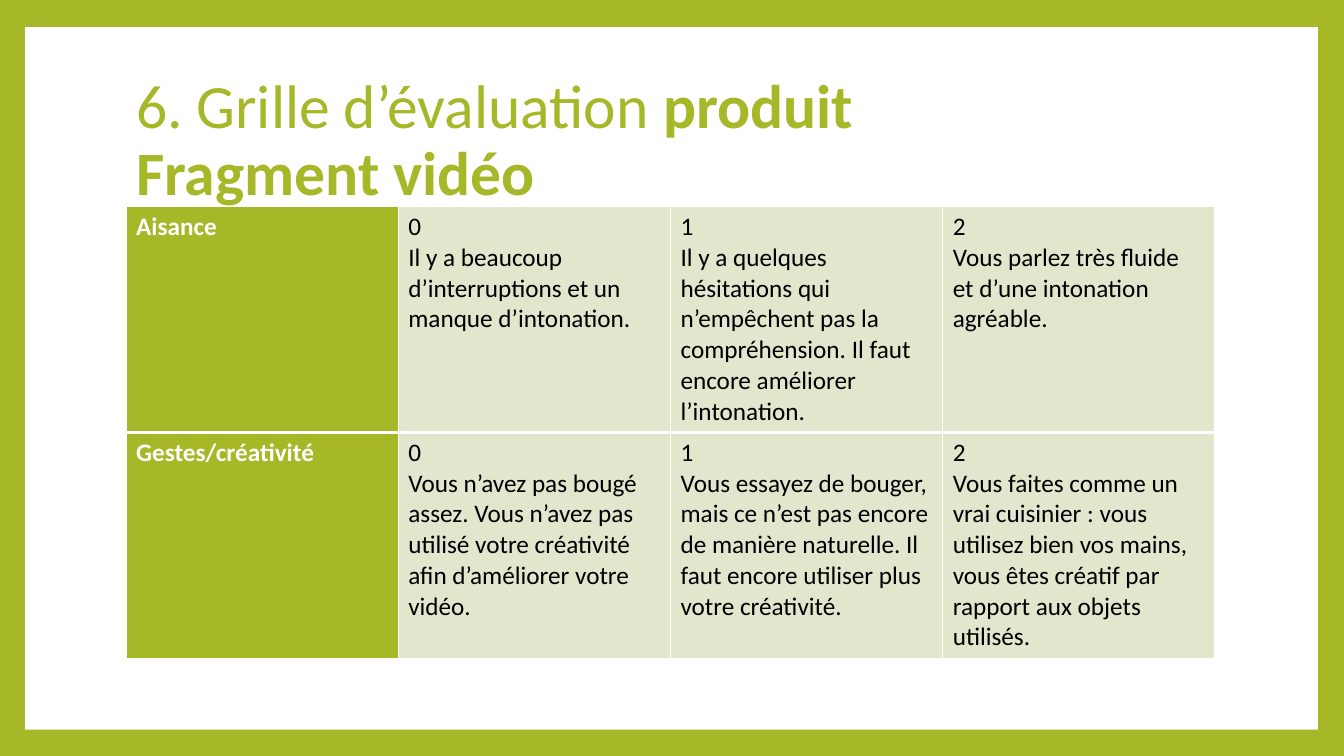
from dataclasses import dataclass

from lxml import etree
from pptx import Presentation
from pptx.dml.color import RGBColor
from pptx.enum.shapes import MSO_SHAPE
from pptx.enum.text import MSO_ANCHOR, MSO_AUTO_SIZE, PP_ALIGN
from pptx.oxml.ns import qn
from pptx.util import Inches, Pt

RECTANGLE = MSO_SHAPE.RECTANGLE
MIDDLE = MSO_ANCHOR.MIDDLE
NO_AUTOFIT = MSO_AUTO_SIZE.NONE
LEFT = PP_ALIGN.LEFT

GREEN = RGBColor(0xA6, 0xB7, 0x27)
PALE_GREEN = RGBColor(0xE1, 0xE6, 0xCD)
WHITE = RGBColor(0xFF, 0xFF, 0xFF)
BLACK = RGBColor(0x00, 0x00, 0x00)

FONT = "Calibri"
COLUMN_WIDTH = Inches(2.7)
ROW_HEIGHT = Inches(2.24)
THIN, THICK = Pt(1), Pt(3)


@dataclass
class Criterion:
    name: str
    levels: list[str]  # descriptions for scores 0, 1, 2


CRITERIA = [
    Criterion("Aisance", [
        "Il y a beaucoup d’interruptions et un manque d’intonation.",
        "Il y a quelques hésitations qui n’empêchent pas la compréhension. "
        "Il faut encore améliorer l’intonation.",
        "Vous parlez très fluide et d’une intonation agréable.",
    ]),
    Criterion("Gestes/créativité", [
        "Vous n’avez pas bougé assez. Vous n’avez pas utilisé votre créativité "
        "afin d’améliorer votre vidéo.",
        "Vous essayez de bouger, mais ce n’est pas encore de manière naturelle. "
        "Il faut encore utiliser plus votre créativité.",
        "Vous faites comme un vrai cuisinier : vous utilisez bien vos mains, "
        "vous êtes créatif par rapport aux objets utilisés.",
    ]),
]


def set_borders(cell, top: int, bottom: int) -> None:
    properties = cell._tc.get_or_add_tcPr()
    widths = {"a:lnL": THIN, "a:lnR": THIN, "a:lnT": top, "a:lnB": bottom}
    for tag, width in widths.items():
        line = etree.SubElement(properties, qn(tag), w=str(width))
        fill = etree.SubElement(line, qn("a:solidFill"))
        etree.SubElement(fill, qn("a:srgbClr"), val=str(WHITE))


def fill_cell(cell, text: str, background: RGBColor, color: RGBColor, bold: bool) -> None:
    cell.fill.solid()
    cell.fill.fore_color.rgb = background
    cell.text = text
    for para in cell.text_frame.paragraphs:
        para.font.name = FONT
        para.font.size = Pt(18)
        para.font.bold = bold
        para.font.color.rgb = color


def add_frame(page) -> None:
    page.background.fill.solid()
    page.background.fill.fore_color.rgb = GREEN
    panel = page.shapes.add_shape(
        RECTANGLE, Inches(0.25), Inches(0.27), Inches(12.82), Inches(6.97))
    panel.shadow.inherit = False
    panel.fill.solid()
    panel.fill.fore_color.rgb = WHITE
    panel.line.fill.background()
    # Send the panel behind the title
    page.shapes.title.element.addprevious(panel.element)


def add_title(page) -> None:
    title = page.shapes.title
    title.left, title.top = Inches(1.25), Inches(0.67)
    title.width, title.height = Inches(10.8), Inches(1.48)
    title.text_frame.auto_size = NO_AUTOFIT
    title.text_frame.vertical_anchor = MIDDLE
    para = title.text_frame.paragraphs[0]
    para.alignment = LEFT
    para.line_spacing = 0.9
    para.font.name = FONT
    para.font.size = Pt(44)
    para.font.color.rgb = GREEN
    para.add_run().text = "6. Grille d’évaluation "
    product = para.add_run()
    product.text = "produit "
    product.font.bold = True
    para.add_line_break()
    fragment = para.add_run()
    fragment.text = "Fragment vidéo"
    fragment.font.bold = True


def add_grid(page, criteria: list[Criterion]) -> None:
    rows, columns = len(criteria), 1 + len(criteria[0].levels)
    grid = page.shapes.add_table(
        rows, columns, Inches(1.25), Inches(2.05),
        COLUMN_WIDTH * columns, ROW_HEIGHT * rows).table
    grid.first_row = False
    grid.horz_banding = False
    for row, criterion in enumerate(criteria):
        top = THIN if row == 0 else THICK
        bottom = THIN if row == rows - 1 else THICK
        for column in range(columns):
            set_borders(grid.cell(row, column), top, bottom)
        fill_cell(grid.cell(row, 0), criterion.name, GREEN, WHITE, True)
        for score, level in enumerate(criterion.levels):
            fill_cell(grid.cell(row, score + 1), f"{score}\n{level}",
                      PALE_GREEN, BLACK, False)


def main() -> None:
    deck = Presentation()
    deck.slide_width, deck.slide_height = Inches(13.33), Inches(7.5)
    page = deck.slides.add_slide(deck.slide_layouts.get_by_name("Title Only"))
    add_frame(page)
    add_title(page)
    add_grid(page, CRITERIA)
    deck.save("out.pptx")


if __name__ == "__main__":
    main()
